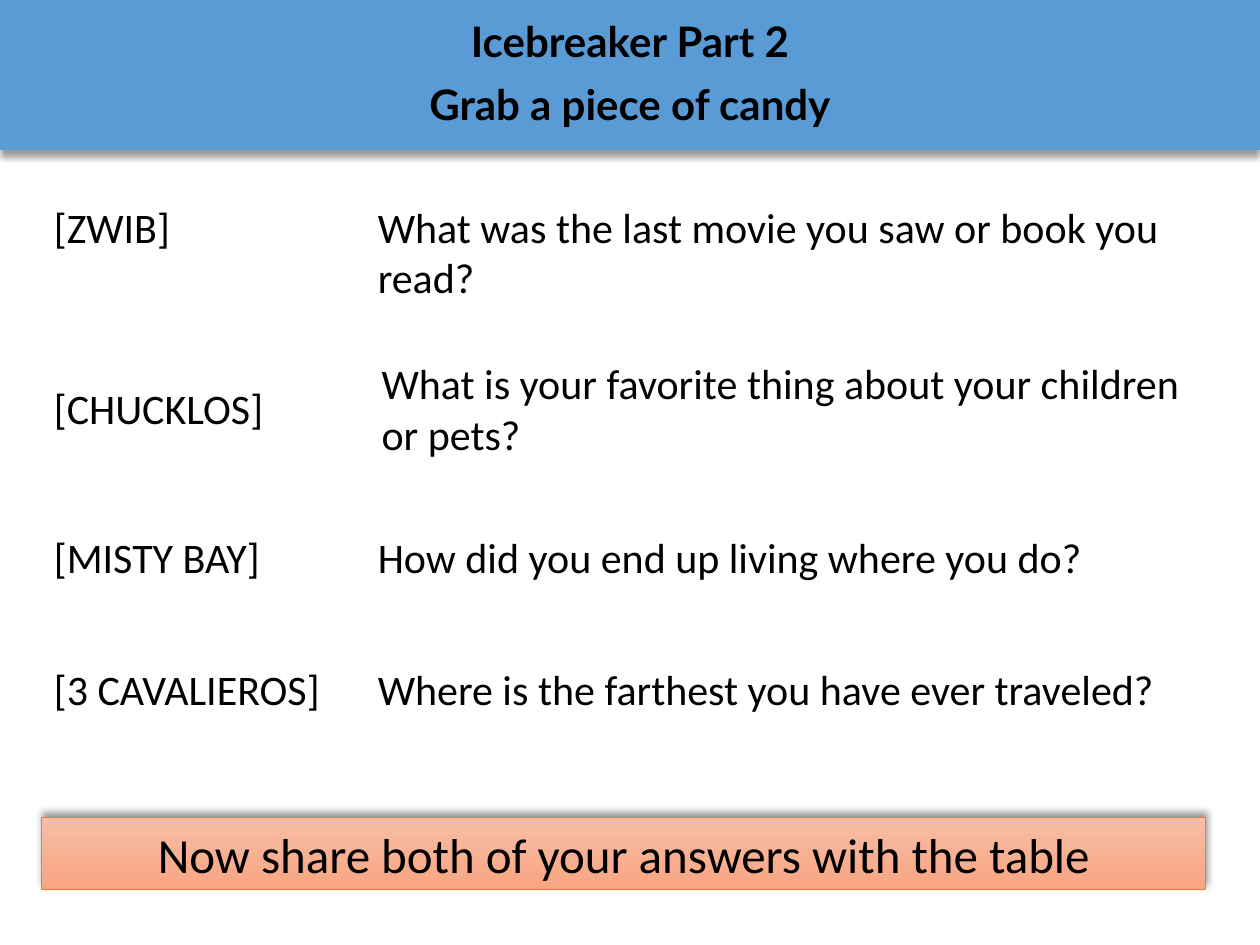
from lxml.etree import SubElement
from pptx import Presentation
from pptx.dml.color import RGBColor
from pptx.enum.shapes import MSO_SHAPE
from pptx.enum.text import MSO_ANCHOR, PP_ALIGN
from pptx.oxml.ns import qn
from pptx.util import Inches, Pt

COLORS = {
    "text": "000000",
    "header": "5B9BD5",
    "callout_top": "F7BDA5",
    "callout_bottom": "F8A582",
    "callout_line": "ED7D31",
    "shadow": "000000",
}


def style_paragraph(paragraph, size, font_name="Calibri"):
    paragraph.font.size = Pt(size)
    paragraph.font.name = font_name
    paragraph.font.color.rgb = RGBColor.from_string(COLORS["text"])


def cast_shadow(shape, degrees):
    """Give the shape a soft shadow falling clockwise from the right by degrees."""
    shape.shadow.inherit = False
    effects = shape._element.spPr.find(qn("a:effectLst"))
    shadow = SubElement(effects, qn("a:outerShdw"), blurRad=str(Pt(4)),
                        dist=str(Pt(3)), dir=str(degrees * 60000), rotWithShape="0")
    color = SubElement(shadow, qn("a:srgbClr"), val=COLORS["shadow"])
    SubElement(color, qn("a:alpha"), val="40000")


prs = Presentation()
prs.slide_width = Inches(10)
prs.slide_height = Inches(7.5)
slide = prs.slides.add_slide(prs.slide_layouts[6])

# Header band
header = slide.shapes.add_shape(MSO_SHAPE.RECTANGLE, 0, 0, Inches(10), Inches(1.19))
header.fill.solid()
header.fill.fore_color.rgb = RGBColor.from_string(COLORS["header"])
header.line.fill.background()
cast_shadow(header, 90)
header.text_frame.vertical_anchor = MSO_ANCHOR.MIDDLE
header.text_frame.text = "Icebreaker Part 2\nGrab a piece of candy"
for title_line in header.text_frame.paragraphs:
    title_line.alignment = PP_ALIGN.CENTER
    title_line.line_spacing = 0.9
    style_paragraph(title_line, 24, "Lato")
    title_line.font.bold = True
header.text_frame.paragraphs[1].space_before = Pt(10)

# Candies and their questions: candy, width, top, question, left, top, height
prompts = [
    ("[ZWIB]", 2.23, 1.55,
     "What was the last movie you saw or book you read?", 2.9, 1.55, 0.91),
    ("[CHUCKLOS]", 2.23, 2.99,
     "What is your favorite thing about your children or pets?", 2.93, 2.79, 0.91),
    ("[MISTY BAY]", 2.23, 4.17,
     "How did you end up living where you do?", 2.9, 4.17, 0.5),
    ("[3 CAVALIEROS]", 2.76, 5.22,
     "Where is the farthest you have ever traveled?", 2.9, 5.22, 0.5),
]
for candy, candy_width, candy_top, question, left, top, height in prompts:
    for wording, box in (
        (candy, (0.33, candy_top, candy_width, 0.5)),
        (question, (left, top, 6.83, height)),
    ):
        prompt = slide.shapes.add_textbox(*map(Inches, box)).text_frame
        prompt.word_wrap = True
        prompt.text = wording
        style_paragraph(prompt.paragraphs[0], 24)

# Closing instruction
callout = slide.shapes.add_shape(
    MSO_SHAPE.RECTANGLE, Inches(0.33), Inches(6.49), Inches(9.24), Inches(0.57))
callout.fill.gradient()
callout.fill.gradient_angle = 270
for stop, name in zip(callout.fill.gradient_stops, ("callout_top", "callout_bottom")):
    stop.color.rgb = RGBColor.from_string(COLORS[name])
callout.line.color.rgb = RGBColor.from_string(COLORS["callout_line"])
callout.line.width = Pt(0.5)
cast_shadow(callout, 270)
callout.text_frame.word_wrap = True
callout.text_frame.text = "Now share both of your answers with the table"
instruction = callout.text_frame.paragraphs[0]
instruction.alignment = PP_ALIGN.CENTER
style_paragraph(instruction, 28)

prs.save("out.pptx")
